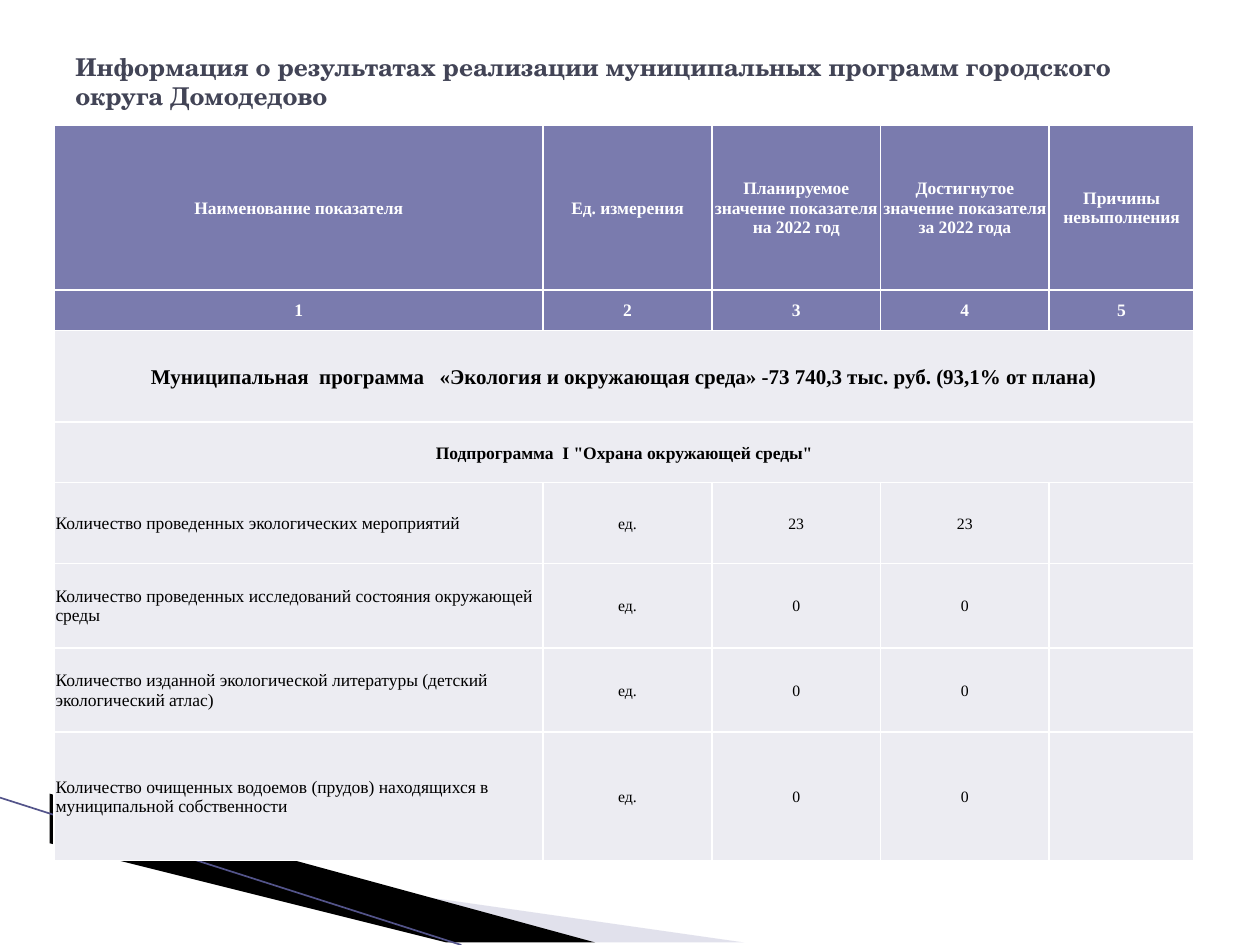
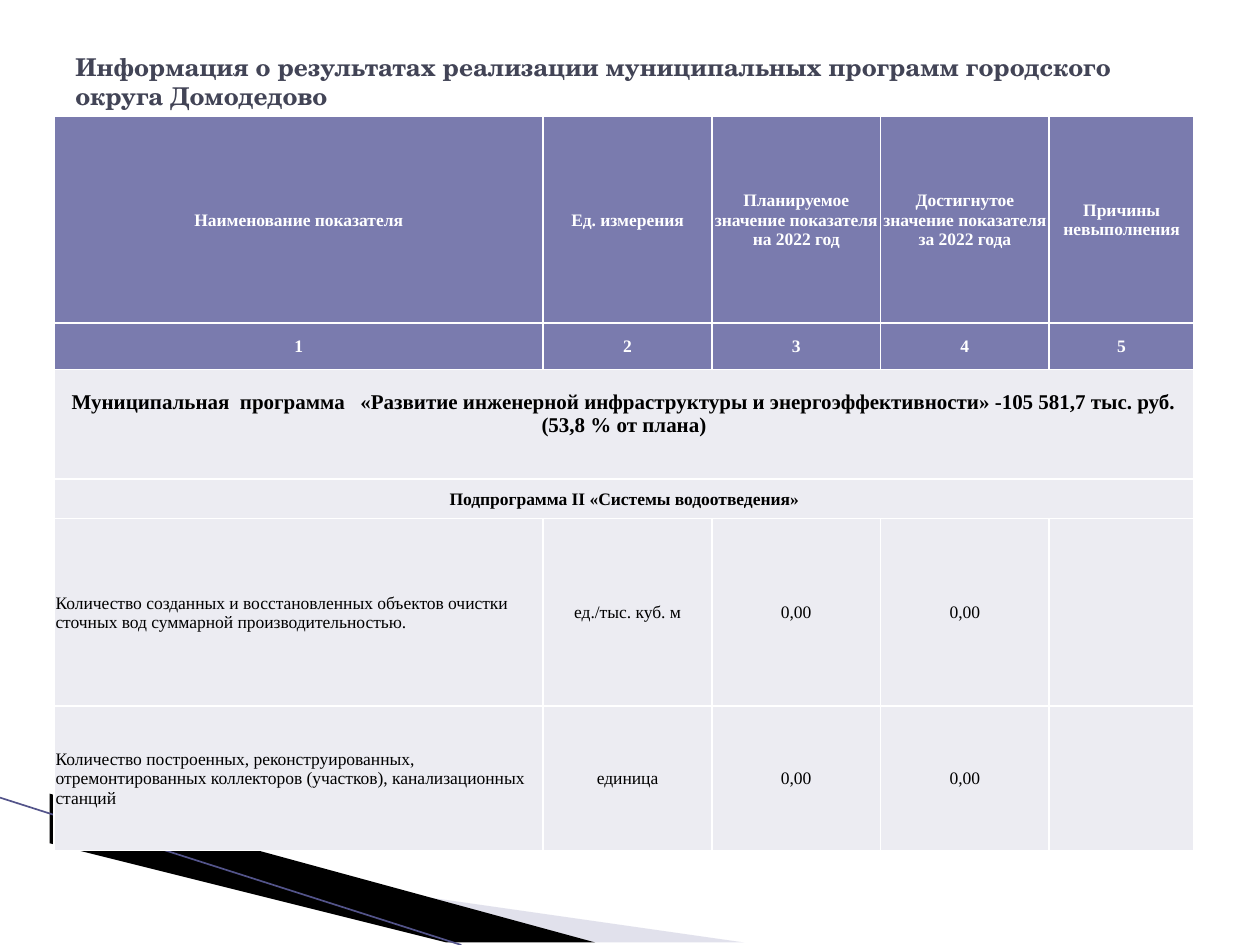
"""Build two slides of municipal programme results tables."""
from lxml.etree import SubElement
from pptx import Presentation
from pptx.dml.color import RGBColor
from pptx.enum.shapes import MSO_CONNECTOR
from pptx.enum.text import MSO_ANCHOR, PP_ALIGN
from pptx.oxml.ns import qn
from pptx.util import Cm, Pt

COLORS = {
    "title": "424456", "header": "7A7BAE", "body": "ECECF2", "white": "FFFFFF",
    "black": "000000", "pale": "B6B6D1", "stripe": "53548A",
}
TITLE_FONT, TABLE_FONT = "TeX Gyre Schola", "Times New Roman"
TITLE = "Информация о результатах реализации муниципальных программ городского округа Домодедово"
HEADER = [
    "Наименование показателя", "Ед. измерения", "Планируемое значение показателя на 2022 год",
    "Достигнутое значение показателя за 2022 года", "Причины невыполнения",
]
NUMBERS = ["1", "2", "3", "4", "5"]
COLUMN_WIDTHS = [9.86, 3.4, 3.4, 3.4, 2.92]
TABLE_LEFT = 1.09
CELL_MARGIN = 0.03
WEDGES = [
    ("pale", 40, [(1.4, 16.54), (15.0, 19.05), (11.5, 19.05), (1.4, 16.51)]),
    ("black", 100, [(1.35, 16.48), (11.5, 19.05), (9.3, 19.05), (1.37, 16.51)]),
]
PROGRAMMES = [
    {
        "top": 2.52, "value_size": 9, "programme_margin": 0,
        "heights": [3.33, 0.81, 1.85, 1.22, 1.63, 1.7, 1.7, 2.59],
        "programme": "Муниципальная  программа   «Экология и окружающая среда» "
                     "-73 740,3 тыс. руб. (93,1% от плана)",
        "subprogramme": "Подпрограмма  I \"Охрана окружающей среды\"",
        "indicators": [
            ["Количество проведенных экологических мероприятий", "ед.", "23", "23", ""],
            ["Количество проведенных исследований состояния окружающей среды",
             "ед.", "0", "0", ""],
            ["Количество изданной экологической литературы (детский экологический атлас)",
             "ед.", "0", "0", ""],
            ["Количество очищенных водоемов (прудов) находящихся в муниципальной собственности",
             "ед.", "0", "0", ""],
        ],
    },
    {
        "top": 2.34, "value_size": 10, "programme_margin": 0.45,
        "heights": [4.17, 0.94, 2.21, 0.79, 3.78, 2.92],
        "programme": "Муниципальная  программа   «Развитие инженерной инфраструктуры и "
                     "энергоэффективности» -105 581,7 тыс. руб. (53,8 % от плана)",
        "subprogramme": "Подпрограмма II «Системы водоотведения»",
        "indicators": [
            ["Количество созданных и восстановленных объектов очистки сточных вод суммарной "
             "производительностью.", "ед./тыс. куб. м", "0,00", "0,00", ""],
            ["Количество построенных, реконструированных, отремонтированных коллекторов "
             "(участков), канализационных станций", "единица", "0,00", "0,00", ""],
        ],
    },
]


def rgb(name):
    return RGBColor.from_string(COLORS[name])


def style_text(para, font_name, size, color, bold):
    for span in para.runs:
        span.font.name = font_name
        span.font.size = Pt(size)
        span.font.color.rgb = rgb(color)
        span.font.bold = bold


def add_decor(page):
    for color, opacity, points in WEDGES:
        builder = page.shapes.build_freeform(*points[0], scale=Cm(1))
        builder.add_line_segments(points[1:], close=True)
        wedge = builder.convert_to_shape()
        wedge.shadow.inherit = False
        wedge.fill.solid()
        wedge.fill.fore_color.rgb = rgb(color)
        wedge.line.fill.background()
        if opacity < 100:
            tint = wedge.fill._xPr.find(".//" + qn("a:srgbClr"))
            SubElement(tint, qn("a:alpha"), val=str(opacity * 1000))
    stripe = page.shapes.add_connector(
        MSO_CONNECTOR.STRAIGHT, Cm(0), Cm(16.08), Cm(9.3), Cm(19.05))
    stripe.line.color.rgb = rgb("stripe")
    stripe.line.width = Pt(0.95)
    SubElement(stripe._element.spPr, qn("a:effectLst"))


def add_title(page):
    box = page.shapes.add_textbox(Cm(1.27), Cm(0.76), Cm(22.86), Cm(1.75))
    box.text_frame.word_wrap = True
    box.text_frame.vertical_anchor = MSO_ANCHOR.MIDDLE
    box.text_frame.text = TITLE
    style_text(box.text_frame.paragraphs[0], TITLE_FONT, 14, "title", True)


def style_cell(cell, fill):
    properties = cell._tc.get_or_add_tcPr()
    for side in ("lnL", "lnR", "lnT", "lnB"):
        border = SubElement(properties, qn("a:" + side), w=str(Pt(1)))
        SubElement(SubElement(border, qn("a:solidFill")), qn("a:srgbClr"), val=COLORS["white"])
    cell.fill.solid()
    cell.fill.fore_color.rgb = rgb(fill)
    cell.vertical_anchor = MSO_ANCHOR.MIDDLE
    cell.margin_left = cell.margin_right = cell.margin_top = Cm(CELL_MARGIN)
    cell.margin_bottom = 0


def add_results(page, programme):
    rows = [HEADER, NUMBERS, [programme["programme"]], [programme["subprogramme"]],
            *programme["indicators"]]
    heights = programme["heights"]
    table = page.shapes.add_table(
        len(rows), len(HEADER), Cm(TABLE_LEFT), Cm(programme["top"]),
        Cm(sum(COLUMN_WIDTHS)), Cm(sum(heights))).table
    for column, width in zip(table.columns, COLUMN_WIDTHS):
        column.width = Cm(width)
    for row, height in zip(table.rows, heights):
        row.height = Cm(height)
    for row_index, texts in enumerate(rows):
        is_header, is_indicator = row_index < 2, row_index > 3
        for cell in table.rows[row_index].cells:
            style_cell(cell, "header" if is_header else "body")
        if len(texts) == 1:
            table.cell(row_index, 0).merge(table.cell(row_index, len(HEADER) - 1))
        for column_index, text in enumerate(texts):
            cell = table.cell(row_index, column_index)
            cell.text = text
            para = cell.text_frame.paragraphs[0]
            is_name = is_indicator and column_index == 0
            para.alignment = PP_ALIGN.LEFT if is_name else PP_ALIGN.CENTER
            size = 12 if row_index == 2 else 10
            if is_indicator and not is_name:
                size = programme["value_size"]
            style_text(para, TABLE_FONT, size, "white" if is_header else "black",
                       not is_indicator)
    table.cell(2, 0).margin_bottom = Cm(programme["programme_margin"])


def main():
    deck = Presentation()
    deck.slide_width, deck.slide_height = Cm(25.4), Cm(19.05)
    for programme in PROGRAMMES:
        page = deck.slides.add_slide(deck.slide_layouts[6])
        add_decor(page)
        add_title(page)
        add_results(page, programme)
    deck.save("out.pptx")


if __name__ == "__main__":
    main()
